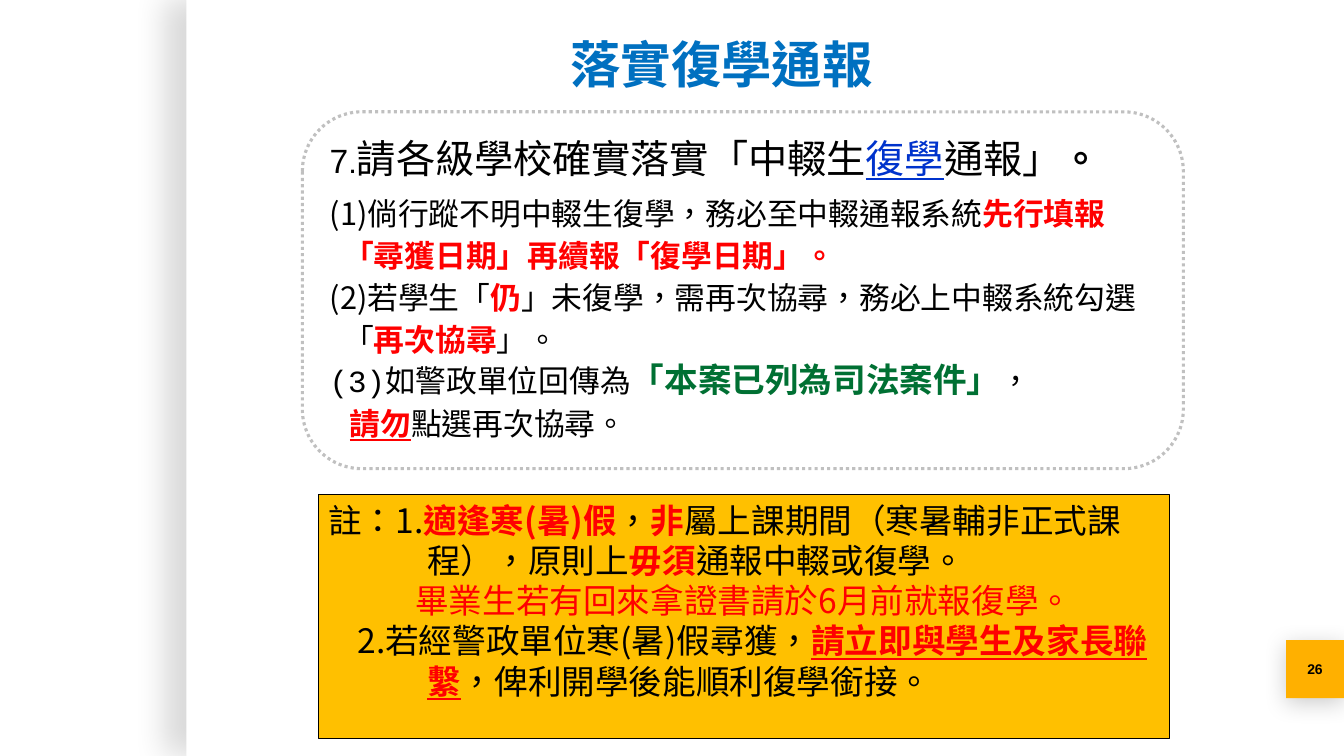
from lxml import etree
from pptx import Presentation
from pptx.dml.color import RGBColor
from pptx.enum.dml import MSO_LINE
from pptx.enum.lang import MSO_LANGUAGE_ID as LANG
from pptx.enum.shapes import MSO_SHAPE as SHAPE
from pptx.enum.text import MSO_ANCHOR as ANCHOR, PP_ALIGN as ALIGN
from pptx.oxml.ns import qn
from pptx.util import Pt

NOTO, COURIER = "Noto Sans CJK SC", "Courier New"
BLACK, RED, GREEN, BLUE = "000000", "FF0000", "007033", "0033CC"
PLAIN = {"name": COURIER, "size": 22, "color": BLACK}
STRONG = {**PLAIN, "color": RED, "bold": True}
HEAD = {"name": "Arial", "size": 28, "color": BLACK}
NOTE = {"name": NOTO, "size": 24, "color": BLACK}
NOTE_RED = {**NOTE, "color": RED}
NOTE_STRONG = {**NOTE_RED, "bold": True}
ITEM = {"line_spacing": Pt(30)}

RULES = [
    (ITEM | {"space_after": Pt(6)}, 0, 0, [
        ("7", HEAD | {"size": 24}), (".", HEAD | {"size": 22}),
        ("請各級學校確實落實「中輟生", HEAD),
        ("復學", HEAD | {"color": BLUE, "underline": True}), ("通報」", HEAD),
        ("。", HEAD | {"name": COURIER, "bold": True})]),
    (ITEM, 0, 0, [
        ("(1)", PLAIN | {"name": NOTO}),
        ("倘行蹤不明中輟生復學，務必至中輟通報系統", PLAIN), ("先行填報", STRONG)]),
    (ITEM, 9.6, 0, [("「尋獲日期」再續報「復學日期」。", STRONG)]),
    (ITEM, 0, 0, [
        ("(2)", PLAIN | {"name": NOTO}), ("若學生「", PLAIN), ("仍", STRONG),
        ("」未復學，需再次協尋，務必上中輟系統勾選", PLAIN)]),
    (ITEM, 9.6, 0, [("「", PLAIN), ("再次協尋", STRONG), ("」。", PLAIN)]),
    (ITEM, 0, 0, [
        ("(3)如警政單位回傳為", PLAIN),
        ("「本案已列為司法案件」", NOTE | {"color": GREEN, "bold": True}),
        ("，", PLAIN)]),
    (ITEM, 14.4, 0, [
        ("請勿", STRONG | {"underline": True}), ("點選再次協尋。", PLAIN)]),
]

REMARKS = [
    ({}, 70.6, -70.6, [
        ("註：1.", NOTE), ("適逢寒(暑)假", NOTE_STRONG), ("，", NOTE),
        ("非", NOTE_STRONG), ("屬上課期間（寒暑輔非正式課程），原則上", NOTE),
        ("毋須", NOTE_STRONG), ("通報中輟或復學。", NOTE)]),
    ({"alignment": ALIGN.CENTER}, 70.6, -70.6, [
        ("畢業生若有回來拿證書請於6月前就報復學。", NOTE_RED)]),
    ({}, 70.6, -49.9, [
        ("2.若經警政單位寒(暑)假尋獲，", NOTE),
        ("請立即與學生及家長聯繫", NOTE_STRONG | {"underline": True}),
        ("，俾利開學後能順利復學銜接。", NOTE)]),
]


def rgb(value):
    """Turn a hex string into a colour."""
    return RGBColor.from_string(value)


def add_box(s, kind, box, fill=None, line=None, width=0.75):
    """Add a preset shape without a shadow, with optional fill and line."""
    sp = s.shapes.add_shape(kind, *map(Pt, box))
    sp.shadow.inherit = False
    if fill:
        sp.fill.solid()
        sp.fill.fore_color.rgb = rgb(fill)
    else:
        sp.fill.background()
    if line:
        sp.line.color.rgb = rgb(line)
        sp.line.width = Pt(width)
    else:
        sp.line.fill.background()
    return sp


def add_shadow(sp, alpha, blur, dist, angle):
    """Give a shape a black outer shadow."""
    effects = sp.element.spPr.find(qn("a:effectLst"))
    shadow = etree.SubElement(
        effects, qn("a:outerShdw"), blurRad=str(Pt(blur)), dist=str(Pt(dist)),
        dir=str(angle * 60000), algn="ctr", rotWithShape="0")
    color = etree.SubElement(shadow, qn("a:srgbClr"), val=BLACK)
    etree.SubElement(color, qn("a:alpha"), val=str(alpha * 1000))


def add_run(p, text, style):
    """Add a run whose font follows a style dict."""
    r = p.add_run()
    r.text = text
    r.font.language_id = LANG.TRADITIONAL_CHINESE
    for key, value in style.items():
        if key == "color":
            r.font.color.rgb = rgb(value)
        else:
            setattr(r.font, key, Pt(value) if key == "size" else value)


def write(sp, paragraphs, anchor=ANCHOR.TOP, wrap=True):
    """Fill a shape with formatted paragraphs."""
    tf = sp.text_frame
    tf.vertical_anchor, tf.word_wrap = anchor, wrap
    for i, (layout, left, indent, runs) in enumerate(paragraphs):
        p = tf.add_paragraph() if i else tf.paragraphs[0]
        for key, value in ({"alignment": ALIGN.LEFT} | layout).items():
            setattr(p, key, value)
        if left:
            pPr = p._p.get_or_add_pPr()
            pPr.set("marL", str(Pt(left)))
            pPr.set("indent", str(Pt(indent)))
        for text, style in runs:
            add_run(p, text, style)


def main():
    """Build the slide and save it."""
    prs = Presentation()
    prs.slide_width, prs.slide_height = Pt(960), Pt(540)
    s = prs.slides.add_slide(prs.slide_layouts[6])

    panel = add_box(s, SHAPE.RECTANGLE, (133.2, 0, 826.8, 540), "FFFFFF")
    add_shadow(panel, 15, 22.5, 15, 180)

    number = add_box(s, SHAPE.RECTANGLE, (918.6, 457.2, 41.4, 41.4), "FFB000")
    add_shadow(number, 20, 16.9, 3.8, 90)
    style = {"name": "Arial", "size": 10, "color": BLACK, "bold": True}
    write(number, [({"alignment": ALIGN.CENTER}, 0, 0, [("26", style)])], ANCHOR.MIDDLE)

    rules = add_box(s, SHAPE.ROUNDED_RECTANGLE, (216, 79.9, 629.3, 254.9),
                    line="C0C0C0", width=2.25)
    rules.line.dash_style = MSO_LINE.ROUND_DOT
    write(rules, RULES, ANCHOR.MIDDLE, wrap=False)

    remarks = add_box(s, SHAPE.RECTANGLE, (227.5, 353.2, 607.7, 174.5), "FFC000", BLACK)
    write(remarks, REMARKS)

    title = s.shapes.add_textbox(*map(Pt, (400.3, 20.2, 260.6, 51.1)))
    style = {"name": "Arial", "size": 36, "color": "0070C0", "bold": True}
    write(title, [({}, 0, 0, [("落實復學通報", style)])])

    prs.save("out.pptx")


if __name__ == "__main__":
    main()
